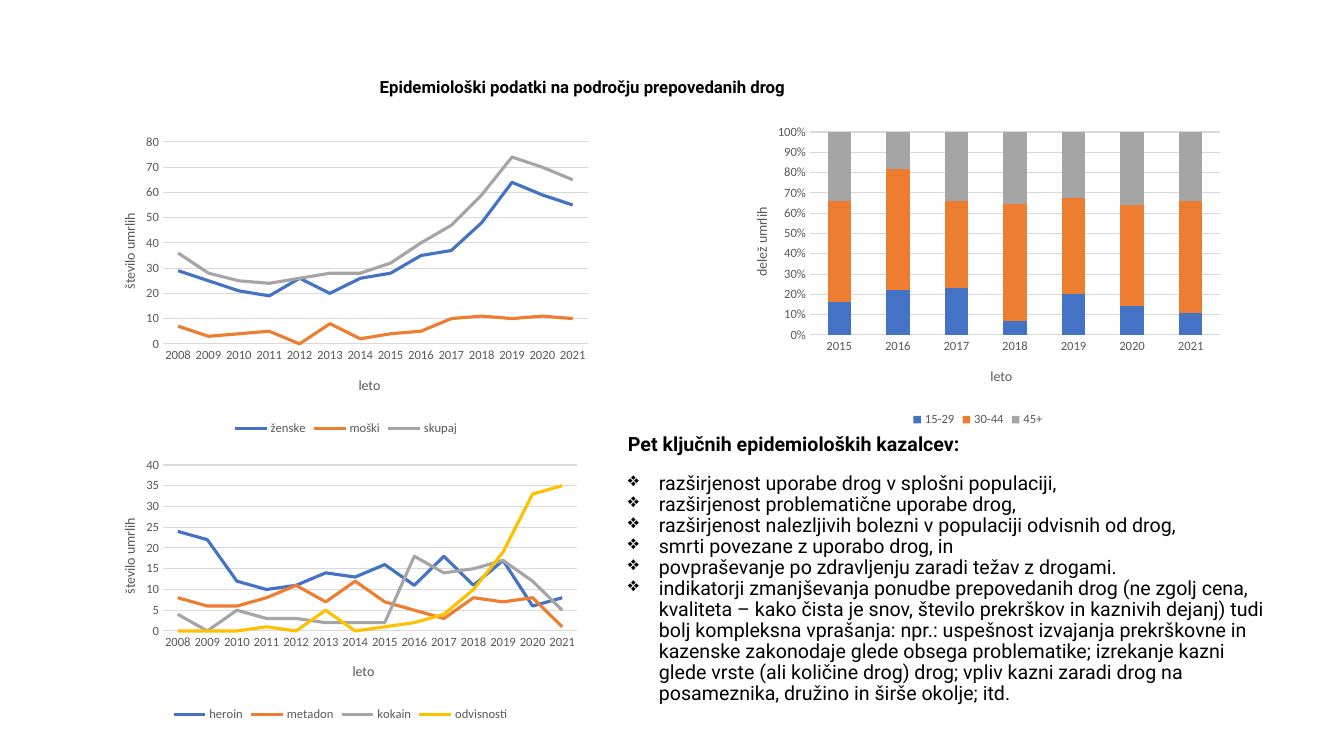
from lxml.etree import SubElement
from pptx import Presentation
from pptx.chart.data import CategoryChartData
from pptx.dml.color import RGBColor
from pptx.enum.chart import XL_CHART_TYPE as ChartType
from pptx.enum.chart import XL_LEGEND_POSITION as LegendPosition
from pptx.enum.chart import XL_TICK_MARK as TickMark
from pptx.enum.text import PP_ALIGN as Align
from pptx.oxml import parse_xml
from pptx.oxml.ns import nsdecls, qn
from pptx.util import Pt

EMU_PER_PX = 914400 / 100.8
SLIDE_SIZE = (1344, 756)
COLORS = {"text": "000000", "label": "595959", "grid": "D9D9D9",
          "blue": "4472C4", "orange": "ED7D31", "gray": "A5A5A5", "gold": "FFC000"}
SERIES_COLORS = ["blue", "orange", "gray", "gold"]
TITLE = "Epidemiološki podatki na področju prepovedanih drog"
TITLE_BOX = (109, 71, 947, 73)
HEADING = "Pet ključnih epidemioloških kazalcev:"
INDICATORS_BOX = (618, 431, 659, 281)
INDICATORS = [
    "razširjenost uporabe drog v splošni populaciji,",
    "razširjenost problematične uporabe drog,",
    "razširjenost nalezljivih bolezni v populaciji odvisnih od drog,",
    "smrti povezane z uporabo drog, in",
    "povpraševanje po zdravljenju zaradi težav z drogami.",
    "indikatorji zmanjševanja ponudbe prepovedanih drog (ne zgolj cena, kvaliteta – kako "
    "čista je snov, število prekrškov in kaznivih dejanj) tudi bolj kompleksna vprašanja: "
    "npr.: uspešnost izvajanja prekrškovne in kazenske zakonodaje glede obsega "
    "problematike; izrekanje kazni glede vrste (ali količine drog) drog; vpliv kazni zaradi "
    "drog na posameznika, družino in širše okolje; itd.",
]

# Boxes and plots are (left, top, width, height); titles are (left, top), all on the slide.
CHARTS = [
    {"kind": ChartType.LINE, "box": (94, 128, 504, 312), "plot": (163, 142, 425, 202),
     "x_title": ("leto", (356, 374)), "y_title": ("število umrlih", (118, 211)),
     "years": range(2008, 2022), "scale": (80, 10, "0"),
     "series": {
         "ženske": (29, 25, 21, 19, 26, 20, 26, 28, 35, 37, 48, 64, 59, 55),
         "moški": (7, 3, 4, 5, 0, 8, 2, 4, 5, 10, 11, 10, 11, 10),
         "skupaj": (36, 28, 25, 24, 26, 28, 28, 32, 40, 47, 59, 74, 70, 65)}},
    {"kind": ChartType.COLUMN_STACKED_100, "box": (726, 119, 504, 312),
     "plot": (810, 132, 410, 203),
     "x_title": ("leto", (988, 365)), "y_title": ("delež umrlih", (750, 205)),
     "years": range(2015, 2022), "scale": (1, 0.1, "0%"),
     "series": {
         "15-29": (16, 22, 23, 7, 20, 14, 11),
         "30-44": (50, 60, 43, 58, 47, 50, 55),
         "45+": (34, 18, 34, 36, 32, 36, 34)}},
    {"kind": ChartType.LINE, "box": (94, 453, 493, 273), "plot": (163, 465, 414, 166),
     "x_title": ("leto", (350, 660)), "y_title": ("število umrlih", (118, 516)),
     "years": range(2008, 2022), "scale": (40, 5, "0"),
     "series": {
         "heroin": (24, 22, 12, 10, 11, 14, 13, 16, 11, 18, 11, 17, 6, 8),
         "metadon": (8, 6, 6, 8, 11, 7, 12, 7, 5, 3, 8, 7, 8, 1),
         "kokain": (4, 0, 5, 3, 3, 2, 2, 2, 18, 14, 15, 17, 12, 5),
         "odvisnosti": (0, 0, 0, 1, 0, 5, 0, 1, 2, 4, 10, 19, 33, 35)}},
]


def px(*lengths):
    return [round(length * EMU_PER_PX) for length in lengths]


def color(name):
    return RGBColor.from_string(COLORS[name])


def set_font(font, name, size, color_name, bold=False):
    font.name, font.size, font.bold = name, Pt(size), bold
    font.color.rgb = color(color_name)


def set_line(line, color_name, width):
    line.color.rgb = color(color_name)
    line.width = Pt(width)


def place(parent, index, box, spot, inner=False):
    """Give a chart part a fixed place, as fractions of the chart's box."""
    for old in parent.findall(qn("c:layout")):
        parent.remove(old)
    left, top, width, height = box
    values = {"x": (spot[0] - left) / width, "y": (spot[1] - top) / height}
    if inner:
        values.update(w=spot[2] / width, h=spot[3] / height)
    layout = parse_xml(f"<c:layout {nsdecls('c')}/>")
    manual = SubElement(layout, qn("c:manualLayout"))
    if inner:
        SubElement(manual, qn("c:layoutTarget")).set("val", "inner")
    for key in "xy":
        SubElement(manual, qn(f"c:{key}Mode")).set("val", "edge")
    for key, value in values.items():
        SubElement(manual, qn(f"c:{key}")).set("val", f"{value:.4f}")
    parent.insert(index, layout)


def style_axis(axis, title, box, rotation):
    text, spot = title
    axis.major_tick_mark = axis.minor_tick_mark = TickMark.NONE
    set_font(axis.tick_labels.font, "Calibri", 9, "label")
    frame = axis.axis_title.text_frame
    frame.text = text
    set_font(frame.paragraphs[0].font, "Calibri", 10, "label")
    element = axis.axis_title._element
    element.find(".//" + qn("a:bodyPr")).set("rot", str(rotation))
    place(element, 1, box, spot)


def add_chart(page, content):
    data = CategoryChartData()
    data.categories = [str(year) for year in content["years"]]
    for name, values in content["series"].items():
        data.add_series(name, values)
    box = content["box"]
    chart = page.shapes.add_chart(content["kind"], *px(*box), data).chart
    set_font(chart.font, "Calibri", 10, "text")
    chart.has_title = False
    chart.has_legend = True
    chart.legend.position = LegendPosition.BOTTOM
    chart.legend.include_in_layout = False
    set_font(chart.legend.font, "Calibri", 9, "label")

    style_axis(chart.category_axis, content["x_title"], box, 0)
    set_line(chart.category_axis.format.line, "grid", 0.75)
    values_axis = chart.value_axis
    style_axis(values_axis, content["y_title"], box, -5400000)
    values_axis.format.line.fill.background()
    set_line(values_axis.major_gridlines.format.line, "grid", 0.75)
    values_axis.minimum_scale = 0
    values_axis.maximum_scale, values_axis.major_unit, number_format = content["scale"]
    values_axis.tick_labels.number_format = number_format
    values_axis.tick_labels.number_format_is_linked = False
    place(chart._chartSpace.chart.plotArea, 0, box, content["plot"], inner=True)

    plot = chart.plots[0]
    plot.vary_by_categories = False
    is_line = content["kind"] == ChartType.LINE
    if not is_line:
        plot.gap_width, plot.overlap = 150, 100
    for series, color_name in zip(plot.series, SERIES_COLORS):
        if is_line:
            series.smooth = False
            set_line(series.format.line, color_name, 2.25)
        else:
            series.format.fill.solid()
            series.format.fill.fore_color.rgb = color(color_name)


def add_text_frame(page, box):
    frame = page.shapes.add_textbox(*px(*box)).text_frame
    frame.word_wrap = True
    return frame


def add_bullet(para):
    properties = para._p.get_or_add_pPr()
    indent = px(31)[0]
    properties.set("marL", str(indent))
    properties.set("indent", str(-indent))
    SubElement(properties, qn("a:buChar")).set("char", "❖")


def add_title(page):
    para = add_text_frame(page, TITLE_BOX).paragraphs[0]
    para.text, para.alignment, para.line_spacing = TITLE, Align.CENTER, Pt(15)
    set_font(para.font, "Roboto", 12, "text", bold=True)


def add_indicators(page):
    frame = add_text_frame(page, INDICATORS_BOX)
    heading = frame.paragraphs[0]
    heading.text, heading.line_spacing, heading.space_after = HEADING, 0.8, Pt(13)
    set_font(heading.font, "Roboto", 14, "text", bold=True)
    for indicator in INDICATORS:
        para = frame.add_paragraph()
        para.text, para.line_spacing = indicator, Pt(15)
        set_font(para.font, "Roboto", 14, "text")
        add_bullet(para)


def main():
    deck = Presentation()
    deck.slide_width, deck.slide_height = px(*SLIDE_SIZE)
    page = deck.slides.add_slide(deck.slide_layouts[6])
    add_title(page)
    for content in CHARTS:
        add_chart(page, content)
    add_indicators(page)
    deck.save("out.pptx")


if __name__ == "__main__":
    main()
